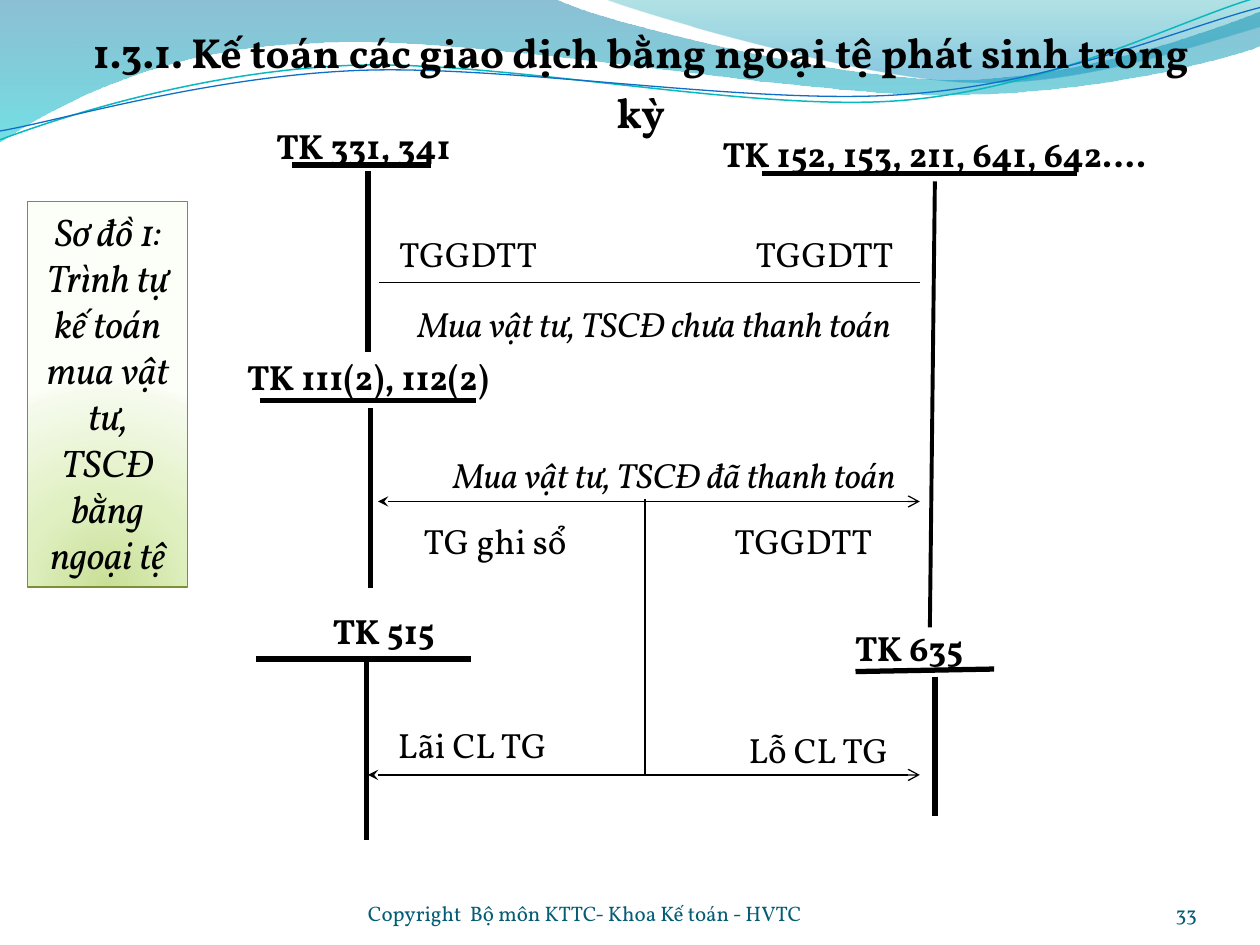
from lxml.etree import SubElement
from pptx import Presentation
from pptx.dml.color import RGBColor
from pptx.enum.shapes import MSO_CONNECTOR, MSO_SHAPE
from pptx.enum.text import MSO_ANCHOR, MSO_AUTO_SIZE, PP_ALIGN
from pptx.oxml.ns import qn
from pptx.util import Pt

EMU_PER_PX = 9144
FONT = "Vollkorn"

BLACK = RGBColor(0x00, 0x00, 0x00)
FOOTER_TEAL = RGBColor(0x04, 0x5D, 0x75)
OLIVE = RGBColor(0x7B, 0x91, 0x35)
WAVE_TEAL = RGBColor(0x0A, 0xB8, 0xBF)
WAVE_BLUE = RGBColor(0x0F, 0x6F, 0xC6)
DEEP_BLUE = RGBColor(0x00, 0x74, 0xA1)
CYAN = RGBColor(0x00, 0xC6, 0xCF)
SEA_GREEN = RGBColor(0x00, 0xA1, 0xA9)
SKY_BLUE = RGBColor(0x00, 0x8B, 0xBF)
LEAF = RGBColor(0xC9, 0xDF, 0x97)
PALE_LEAF = RGBColor(0xE0, 0xF0, 0xC1)
CREAM = RGBColor(0xF5, 0xFA, 0xEC)
IVORY = RGBColor(0xFC, 0xFE, 0xF8)

ACCOUNTS = [
    ("TK 331, 341", (152, 94, 273, 44)),
    ("TK 152, 153, 211, 641, 642….", (511, 100, 461, 44)),
    ("TK 111(2), 112(2)", (125, 277, 334, 44)),
    ("TK 515", (175, 479, 259, 44)),
    ("TK 635", (585, 492, 273, 44)),
]
RATES = [
    ("TGGDTT", (277, 180, 189, 44)),
    ("TGGDTT", (536, 180, 237, 44)),
    ("TG ghi sổ", (284, 407, 218, 44)),
    ("TGGDTT", (519, 407, 237, 44)),
    ("Lãi CL TG", (293, 569, 164, 44)),
    ("Lỗ CL TG", (562, 573, 175, 44)),
]
TRANSACTIONS = [
    ("Mua vật tư, TSCĐ chưa thanh toán", (293, 235, 453, 44)),
    ("Mua vật tư, TSCĐ đã thanh toán", (309, 355, 453, 44)),
]
ACCOUNT_LINES = [
    (232, 131, 342, 131), (292, 136, 292, 279),
    (605, 138, 855, 138),
    (206, 318, 378, 318), (294, 324, 294, 467),
    (203, 523, 374, 523), (291, 525, 291, 667),
    (679, 533, 789, 531), (742, 537, 742, 648),
]
ARROWS = [(300, 398, 730, 398), (292, 615, 730, 615)]


def px(value):
    return round(value * EMU_PER_PX)


def apply_format(target, values):
    for name, value in values.items():
        setattr(target, name, value)


def set_gradient(shape, stops, focus=None):
    shape.fill.solid()
    solid = shape.element.spPr.find(qn("a:solidFill"))
    gradient = solid.makeelement(qn("a:gradFill"), {"rotWithShape": "1"})
    solid.getparent().replace(solid, gradient)
    stop_list = SubElement(gradient, qn("a:gsLst"))
    for position, color, opacity in stops:
        stop = SubElement(stop_list, qn("a:gs"), pos=str(position * 1000))
        node = SubElement(stop, qn("a:srgbClr"), val=str(color))
        if opacity < 100:
            SubElement(node, qn("a:alpha"), val=str(opacity * 1000))
    if focus:
        radial = SubElement(gradient, qn("a:path"), {"path": "circle"})
        edges = {side: str(value * 1000) for side, value in zip("ltrb", focus)}
        SubElement(radial, qn("a:fillToRect"), edges)
    else:
        SubElement(gradient, qn("a:lin"), ang="5400000", scaled="1")


def bend_segments(wave, segments):
    steps = iter(list(wave.element.spPr.iter(qn("a:lnTo"))))
    for segment in segments:
        step = next(steps)
        if len(segment) == 6:
            curve = step.makeelement(qn("a:cubicBezTo"), {})
            step.addprevious(curve)
            for control in (step, next(steps), next(steps)):
                curve.append(control[0])
                control.getparent().remove(control)


def add_wave(page, start, segments, closed):
    builder = page.shapes.build_freeform(*map(px, start), scale=1.0)
    for segment in segments:
        corners = [(px(x), px(y)) for x, y in zip(segment[::2], segment[1::2])]
        builder.add_line_segments(corners, close=closed and segment is segments[-1])
    wave = builder.convert_to_shape()
    bend_segments(wave, segments)
    wave.shadow.inherit = False
    return wave


def add_wave_band(page, start, segments, stops):
    band = add_wave(page, start, segments, True)
    set_gradient(band, stops)
    band.line.fill.background()


def add_wave_line(page, start, segments, color, width):
    wave = add_wave(page, start, segments, False)
    wave.fill.background()
    wave.line.color.rgb = color
    wave.line.width = Pt(width)


def add_line(page, ends, width, arrows=False):
    line = page.shapes.add_connector(MSO_CONNECTOR.STRAIGHT, *map(px, ends))
    line.line.color.rgb = BLACK
    line.line.width = Pt(width)
    properties = line.element.spPr
    if arrows:
        outline = properties.find(qn("a:ln"))
        SubElement(outline, qn("a:headEnd"), type="stealth")
        SubElement(outline, qn("a:tailEnd"), type="arrow")
    SubElement(properties, qn("a:effectLst"))


def write_text(box, text, size, align=PP_ALIGN.CENTER, color=BLACK, spacing=None, frame=None, **style):
    text_frame = box.text_frame
    apply_format(text_frame, {"word_wrap": True, "auto_size": MSO_AUTO_SIZE.SHAPE_TO_FIT_TEXT,
                              "vertical_anchor": MSO_ANCHOR.TOP, **(frame or {})})
    para = text_frame.paragraphs[0]
    apply_format(para, {"alignment": align, "line_spacing": spacing})
    span = para.add_run()
    span.text = text
    apply_format(span.font, {"name": FONT, "size": Pt(size), **style})
    span.font.color.rgb = color


def add_label(page, text, bounds, size=20, **options):
    write_text(page.shapes.add_textbox(*map(px, bounds)), text, size, **options)


def add_footer(page, text, bounds, align):
    frame = dict.fromkeys(("margin_left", "margin_top", "margin_right", "margin_bottom"), 0)
    frame.update(auto_size=MSO_AUTO_SIZE.NONE, vertical_anchor=MSO_ANCHOR.BOTTOM)
    add_label(page, text, bounds, 12, align=align, color=FOOTER_TEAL, frame=frame)


def add_caption_box(page, text, bounds):
    box = page.shapes.add_shape(MSO_SHAPE.RECTANGLE, *map(px, bounds))
    set_gradient(box, [(0, LEAF, 100), (43, PALE_LEAF, 100), (93, CREAM, 100), (100, IVORY, 100)],
                 focus=(50, 130, 50, -30))
    box.line.color.rgb = OLIVE
    box.line.width = Pt(0.75)
    box.shadow.inherit = False
    write_text(box, text, 22, italic=True)


def place_title(page, text, bounds):
    title = page.shapes.title
    apply_format(title, dict(zip(("left", "top", "width", "height"), map(px, bounds))))
    write_text(title, text, 24, spacing=1.2, bold=True)
    title.element.getparent().append(title.element)


def add_waves(page):
    add_wave_band(page, (0, 0), [
        (440, -1), (476, 17, 664, 63, 758, 63), (853, 63, 958, 26, 1000, 9), (1001, 36),
        (983, 44, 870, 76, 746, 75), (622, 75, 382, 28, 257, 34), (129, 36, 46, 83, -1, 113),
        (0, 0),
    ], [(0, DEEP_BLUE, 45), (100, CYAN, 55)])
    add_wave_band(page, (479, -1), [
        (509, 11, 682, 62, 769, 65), (856, 69, 961, 32, 1000, 21), (1000, 0), (479, -1),
    ], [(0, SEA_GREEN, 30), (80, SKY_BLUE, 45)])
    add_wave_line(page, (0, 111), [
        (48, 93, 158, 57, 277, 52), (395, 47, 593, 89, 713, 80), (833, 71, 938, 15, 998, -2),
    ], WAVE_TEAL, 0.85)
    add_wave_line(page, (0, 104), [
        (47, 96, 164, 61, 283, 56), (403, 51, 597, 84, 717, 75), (836, 67, 941, 21, 1000, 6),
    ], WAVE_BLUE, 0.75)


def main():
    deck = Presentation()
    apply_format(deck, {"slide_width": px(1000), "slide_height": px(750)})
    page = deck.slides.add_slide(deck.slide_layouts[5])
    add_waves(page)
    add_footer(page, "Copyright  Bộ môn KTTC- Khoa Kế toán - HVTC", (292, 695, 367, 40), PP_ALIGN.LEFT)
    add_footer(page, "33", (867, 695, 83, 40), PP_ALIGN.RIGHT)
    add_line(page, (742, 144, 738, 498), 2.25)
    for ends in ACCOUNT_LINES:
        add_line(page, ends, 3)
    add_line(page, (512, 396, 512, 615), 1)
    add_line(page, (301, 224, 730, 224), 0.75)
    for ends in ARROWS:
        add_line(page, ends, 0.75, arrows=True)
    for labels, style in ((ACCOUNTS, {"bold": True}), (RATES, {}), (TRANSACTIONS, {"italic": True})):
        for text, bounds in labels:
            add_label(page, text, bounds, **style)
    place_title(page, "1.3.1. Kế toán các giao dịch bằng ngoại tệ phát sinh trong kỳ", (42, 8, 933, 55))
    add_caption_box(page, "Sơ đồ 1: Trình tự kế toán mua vật tư, TSCĐ bằng ngoại tệ", (22, 160, 127, 306))
    deck.save("out.pptx")


if __name__ == "__main__":
    main()
